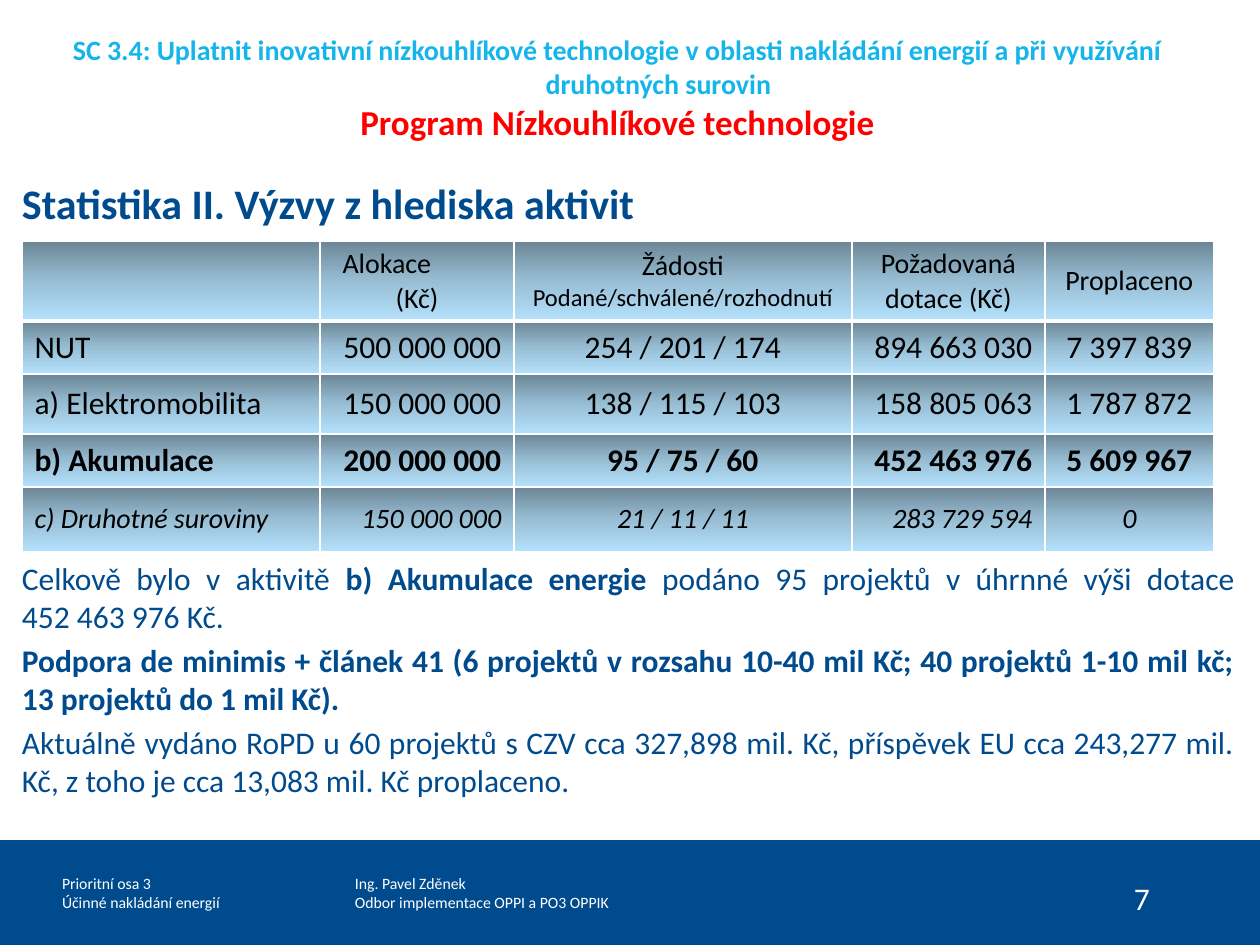
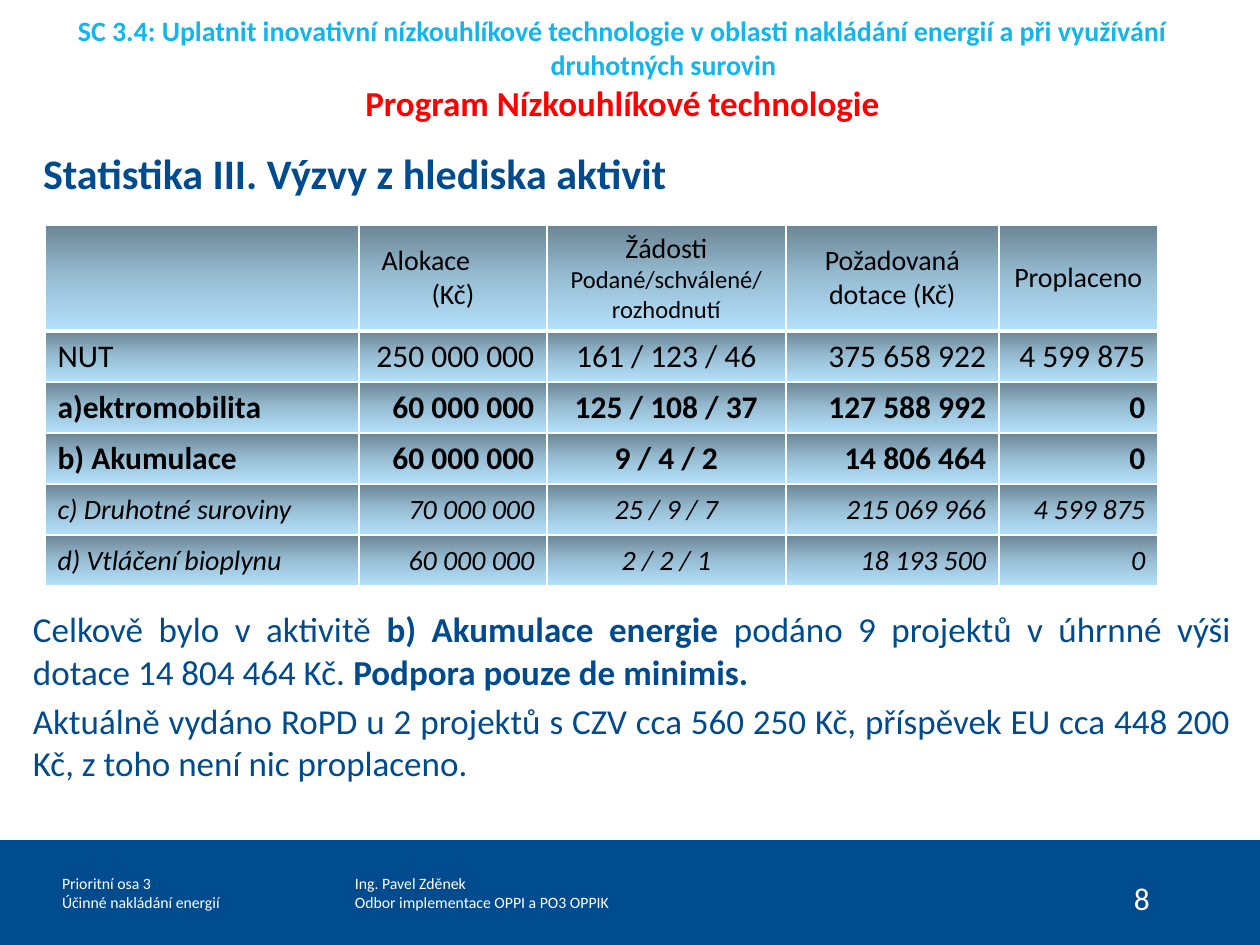
from lxml import etree
from pptx import Presentation
from pptx.dml.color import RGBColor
from pptx.enum.shapes import MSO_SHAPE
from pptx.enum.text import MSO_ANCHOR as ANCHOR, PP_ALIGN as ALIGN
from pptx.oxml.ns import qn
from pptx.util import Emu, Pt

SLIDE_W, SLIDE_H, BAND_TOP = 1260, 945, 840
NAVY, SKY, RED, WHITE, BLACK = "004B8D", "13B5EA", "FF0000", "FFFFFF", "000000"
GRADIENT = [(0, "6B8595"), (50, "98BED4"), (100, "B4E1FC")]
FONT = "Calibri"
LEFT, CENTER, RIGHT, JUSTIFY = ALIGN.LEFT, ALIGN.CENTER, ALIGN.RIGHT, ALIGN.JUSTIFY

PLAIN = dict(size=18)
BOLD = dict(size=18, bold=True)
ITALIC = dict(size=16, italic=True)

TITLE_LINES = [
    ("SC 3.4: Uplatnit inovativní nízkouhlíkové technologie v oblasti nakládání energií "
     "a při využívání", 16, SKY, 0),
    ("druhotných surovin", 16, SKY, 82),
    ("Program Nízkouhlíkové technologie", 20, RED, 0),
]
FOOTERS = [
    ((62, 258), ["Prioritní osa 3", "Účinné nakládání energií"]),
    ((355, 302), ["Ing. Pavel Zděnek", "Odbor implementace OPPI a PO3 OPPIK"]),
]


def px(n):
    return Emu(round(n * 914400 / 126))


def rgb(color):
    return RGBColor.from_string(color)


def add_run(p, text, size, color, **fmt):
    r = p.add_run()
    r.text = text
    r.font.color.rgb = rgb(color)
    for name, value in dict(fmt, name=FONT, size=Pt(size)).items():
        setattr(r.font, name, value)


def add_par(tf, first, align=LEFT, indent=0):
    p = tf.paragraphs[0] if first else tf.add_paragraph()
    p.alignment = align
    if indent:
        p._p.get_or_add_pPr().set("marL", str(px(indent)))
    return p


def add_box(s, box, anchor=ANCHOR.TOP):
    tf = s.shapes.add_textbox(*map(px, box)).text_frame
    fmt = dict(word_wrap=True, vertical_anchor=anchor, margin_left=0, margin_right=0,
               margin_top=0, margin_bottom=0)
    for name, value in fmt.items():
        setattr(tf, name, value)
    return tf


def add_frame(s, number):
    fill = s.background.fill
    fill.solid()
    fill.fore_color.rgb = rgb(NAVY)
    sheet = s.shapes.add_shape(MSO_SHAPE.RECTANGLE, 0, 0, px(SLIDE_W), px(BAND_TOP))
    sheet.shadow.inherit = False
    sheet.fill.solid()
    sheet.fill.fore_color.rgb = rgb(WHITE)
    sheet.line.fill.background()
    for (x, w), lines in FOOTERS:
        tf = add_box(s, (x, BAND_TOP, w, SLIDE_H - BAND_TOP), ANCHOR.MIDDLE)
        for i, line in enumerate(lines):
            add_run(add_par(tf, i == 0), line, 9, WHITE)
    tf = add_box(s, (1134, BAND_TOP + 39, 40, 40))
    add_run(tf.paragraphs[0], str(number), 18, WHITE)


def add_title(s, x, y):
    tf = add_box(s, (x, y, 1135, 111), ANCHOR.MIDDLE)
    for i, (text, size, color, indent) in enumerate(TITLE_LINES):
        add_run(add_par(tf, i == 0, CENTER, indent), text, size, color, bold=True)


def add_heading(s, x, y, text):
    tf = add_box(s, (x, y, 1100, 52))
    add_run(tf.paragraphs[0], text, 24, NAVY, bold=True)


def add_body(s, box, size, paragraphs):
    tf = add_box(s, box)
    for i, runs in enumerate(paragraphs):
        p = add_par(tf, i == 0, JUSTIFY)
        p.space_before = Pt(size * 0.2 if i else 0)
        for j, (text, bold) in enumerate(runs):
            lines = text.split("\n")
            for k, line in enumerate(lines):
                if k:
                    p.add_line_break()
                add_run(p, line, size, NAVY, bold=bold)


def add_color(parent, color):
    etree.SubElement(parent, qn("a:srgbClr"), val=color)


def style_cell(cell, bottom):
    cell.vertical_anchor = ANCHOR.MIDDLE
    tcPr = cell._tc.get_or_add_tcPr()
    for side, width in dict(L=1, R=1, T=1, B=bottom).items():
        ln = etree.SubElement(tcPr, qn(f"a:ln{side}"), w=str(Pt(width)))
        add_color(etree.SubElement(ln, qn("a:solidFill")), WHITE)
    grad = etree.SubElement(tcPr, qn("a:gradFill"), rotWithShape="1")
    stops = etree.SubElement(grad, qn("a:gsLst"))
    for pos, color in GRADIENT:
        add_color(etree.SubElement(stops, qn("a:gs"), pos=str(pos * 1000)), color)
    etree.SubElement(grad, qn("a:lin"), ang="5400000", scaled="0")


def add_table(s, x, y, cols, heights, requests, rows, paid_align):
    header = [
        [],
        [("Alokace", 16, LEFT, 10), ("(Kč)", 16, CENTER, 0)],
        [("Žádosti", 16, CENTER, 0), (requests, 14, CENTER, 0)],
        [("Požadovaná dotace (Kč)", 16, CENTER, 0)],
        [("Proplaceno", 16, CENTER, 0)],
    ]
    box = map(px, (x, y, sum(cols), sum(heights)))
    table = s.shapes.add_table(len(heights), len(cols), *box).table
    table.first_row = table.horz_banding = False
    for col, w in zip(table.columns, cols):
        col.width = px(w)
    for row, h in zip(table.rows, heights):
        row.height = px(h)
    for c, lines in enumerate(header):
        cell = table.cell(0, c)
        style_cell(cell, 3)
        for i, (text, size, align, indent) in enumerate(lines):
            add_run(add_par(cell.text_frame, i == 0, align, indent), text, size, BLACK)
    aligns = [LEFT, RIGHT, CENTER, RIGHT, paid_align]
    for i, (fmt, *values) in enumerate(rows, 1):
        for c, (text, align) in enumerate(zip(values, aligns)):
            cell = table.cell(i, c)
            style_cell(cell, 1)
            add_run(add_par(cell.text_frame, True, align), text, color=BLACK, **fmt)


def add_statistics(prs, number, title, heading, table, body):
    s = prs.slides.add_slide(prs.slide_layouts[6])
    add_frame(s, number)
    add_heading(s, *heading)
    add_body(s, **body)
    add_table(s, **table)
    add_title(s, *title)


def main():
    prs = Presentation()
    prs.slide_width, prs.slide_height = px(SLIDE_W), px(SLIDE_H)
    add_statistics(
        prs, 7, (50, 32), (22, 178, "Statistika II. Výzvy z hlediska aktivit"),
        dict(x=22, y=241, cols=[298, 194, 338, 193, 169], heights=[80, 53, 60, 53, 65],
             requests="Podané/schválené/rozhodnutí", paid_align=CENTER, rows=[
                 (PLAIN, "NUT", "500 000 000", "254 / 201 / 174", "894 663 030", "7 397 839"),
                 (PLAIN, "a) Elektromobilita", "150 000 000", "138 / 115 / 103",
                  "158 805 063", "1 787 872"),
                 (BOLD, "b) Akumulace", "200 000 000", "95 / 75 / 60", "452 463 976",
                  "5 609 967"),
                 (ITALIC, "c) Druhotné suroviny", "150 000 000", "21 / 11 / 11",
                  "283 729 594", "0"),
             ]),
        dict(box=(22, 559, 1213, 250), size=18, paragraphs=[
            [("Celkově bylo v aktivitě ", False), ("b) Akumulace energie ", True),
             ("podáno 95 projektů v úhrnné výši dotace\n452 463 976 Kč.", False)],
            [("Podpora de minimis + článek 41 (6 projektů v rozsahu 10-40 mil Kč; "
              "40 projektů 1-10 mil kč; 13 projektů do 1 mil Kč).", True)],
            [("Aktuálně vydáno RoPD u 60 projektů s CZV cca 327,898 mil. Kč, příspěvek EU "
              "cca 243,277 mil. Kč, z toho je cca 13,083 mil. Kč proplaceno.", False)],
        ]))
    add_statistics(
        prs, 8, (55, 13), (43, 148, "Statistika III. Výzvy z hlediska aktivit"),
        dict(x=45, y=225, cols=[314, 188, 239, 213, 159], heights=[106] + [51] * 5,
             requests="Podané/schválené/ rozhodnutí", paid_align=RIGHT, rows=[
                 (PLAIN, "NUT", "250 000 000", "161 / 123 / 46", "375 658 922", "4 599 875"),
                 (BOLD, "a)ektromobilita", "60 000 000", "125 / 108 / 37", "127 588 992", "0"),
                 (BOLD, "b) Akumulace", "60 000 000", "9 / 4 / 2", "14 806 464", "0"),
                 (ITALIC, "c) Druhotné suroviny", "70 000 000", "25 / 9 / 7",
                  "215 069 966", "4 599 875"),
                 (ITALIC, "d) Vtláčení bioplynu", "60 000 000", "2 / 2 / 1",
                  "18 193 500", "0"),
             ]),
        dict(box=(33, 608, 1198, 200), size=20, paragraphs=[
            [("Celkově bylo v aktivitě ", False), ("b) Akumulace energie ", True),
             ("podáno 9 projektů v úhrnné výši dotace 14 804 464 Kč. ", False),
             ("Podpora pouze de minimis.", True)],
            [("Aktuálně vydáno RoPD u 2 projektů s CZV cca 560 250 Kč, příspěvek EU "
              "cca 448 200 Kč, z toho není nic proplaceno.", False)],
        ]))
    prs.save("out.pptx")


if __name__ == "__main__":
    main()
